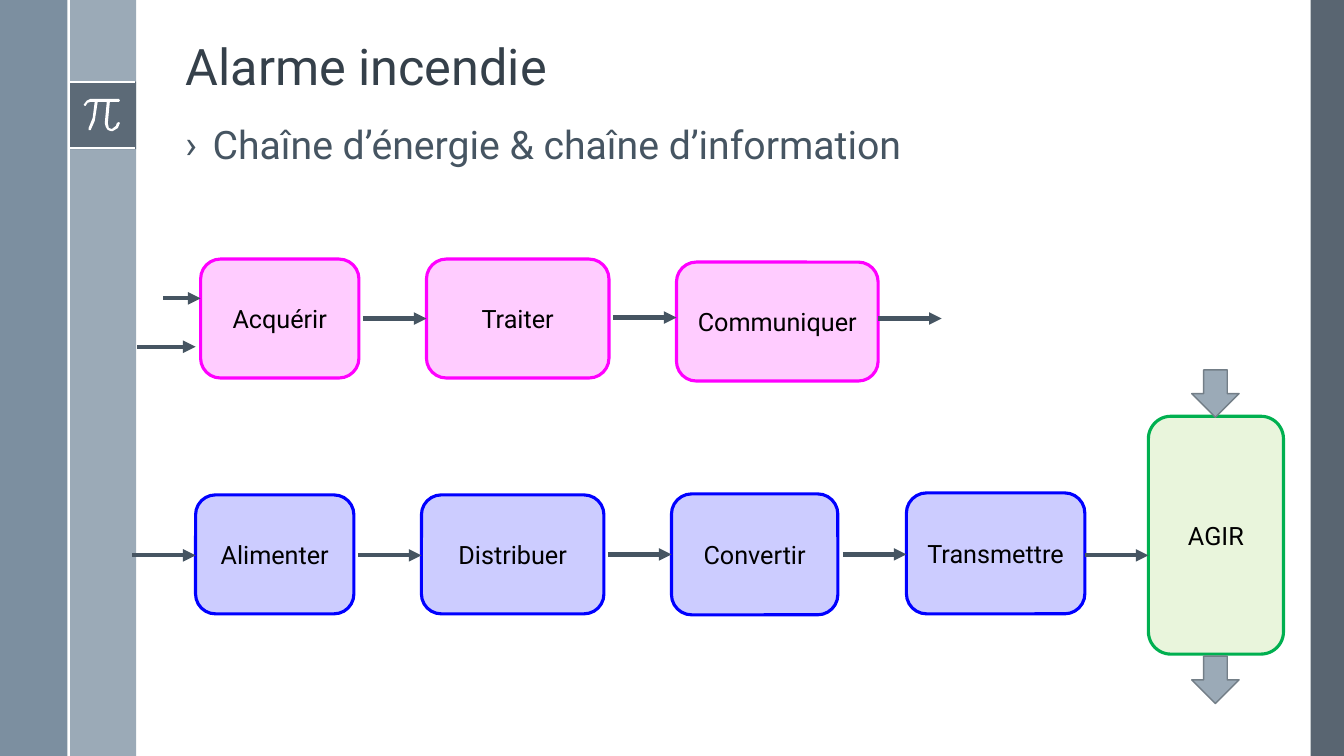
import dataclasses
import typing

import lxml.etree
import pptx
import pptx.dml.color
import pptx.enum.shapes
import pptx.enum.text
import pptx.oxml.ns
import pptx.util

Inches = pptx.util.Inches
Pt = pptx.util.Pt
RGBColor = pptx.dml.color.RGBColor
ShapeType = pptx.enum.shapes.MSO_SHAPE
Anchor = pptx.enum.text.MSO_ANCHOR
Align = pptx.enum.text.PP_ALIGN
qn = pptx.oxml.ns.qn

WHITE = RGBColor(0xFF, 0xFF, 0xFF)
BLACK = RGBColor(0x00, 0x00, 0x00)
TITLE_GREY = RGBColor(0x35, 0x40, 0x4A)
TEXT_GREY = RGBColor(0x46, 0x55, 0x62)
DARK_SLATE = RGBColor(0x47, 0x55, 0x62)
SLATE = RGBColor(0x6A, 0x80, 0x93)
LIGHT_SLATE = RGBColor(0x9B, 0xAA, 0xB7)
ARROW_EDGE = RGBColor(0x73, 0x7E, 0x87)
MAGENTA = RGBColor(0xFF, 0x00, 0xFF)
BLUE = RGBColor(0x00, 0x00, 0xFF)
GREEN = RGBColor(0x00, 0xB0, 0x50)
LIME = RGBColor(0x92, 0xD0, 0x50)
FONT_NAME = "Roboto"


@dataclasses.dataclass(frozen=True)
class Panel:
    left: float
    top: float
    width: float
    height: float
    fill: RGBColor
    opacity: int = 100
    edge: typing.Optional[RGBColor] = None
    edge_width: float = 2.25
    kind: ShapeType = ShapeType.RECTANGLE
    label: str = ""


@dataclasses.dataclass(frozen=True)
class Segment:
    x1: float
    y1: float
    x2: float
    y2: float
    color: RGBColor = TEXT_GREY
    width: float = 3
    arrow: bool = True


def block(label: str, left: float, top: float, width: float, height: float,
          edge: RGBColor, fill: RGBColor) -> Panel:
    return Panel(left, top, width, height, fill, 20, edge,
                 kind=ShapeType.ROUNDED_RECTANGLE, label=label)


def flow(start: float, end: float, height: float) -> Segment:
    return Segment(start, height, end, height)


def rule(x1: float, y1: float, x2: float, y2: float) -> Segment:
    return Segment(x1, y1, x2, y2, WHITE, 1.5, False)


SIDE_BANDS = [
    Panel(13, 0, 0.33, 7.5, DARK_SLATE, 90),
    Panel(0.68, 0, 0.67, 7.5, LIGHT_SLATE),
    Panel(0, 0, 0.67, 7.5, SLATE, 88),
    Panel(0.68, 0.81, 0.67, 0.67, DARK_SLATE, 75),
]
BAND_RULES = [
    rule(0.68, 0.81, 1.34, 0.81),
    rule(0.68, 1.47, 1.34, 1.47),
    rule(0.68, 0, 0.68, 7.5),
]
PI_OUTLINE = [
    (1.18, 0.98), (0.9, 0.98), (0.86, 1), (0.83, 1.04), (0.84, 1.05),
    (0.85, 1.05), (0.87, 1.02), (0.9, 1.01), (0.94, 1.01), (0.92, 1.17),
    (0.88, 1.27), (0.88, 1.29), (0.9, 1.29), (0.94, 1.2), (0.97, 1.01),
    (1.06, 1.01), (1.04, 1.22), (1.05, 1.26), (1.07, 1.29), (1.1, 1.3),
    (1.12, 1.3), (1.17, 1.27), (1.19, 1.22), (1.18, 1.21), (1.16, 1.22),
    (1.15, 1.25), (1.11, 1.28), (1.08, 1.27), (1.07, 1.22), (1.09, 1.01),
    (1.18, 1.01), (1.19, 1),
]
CHAIN_BLOCKS = [
    block("Alimenter", 1.94, 4.91, 1.57, 1.18, BLUE, BLUE),
    block("Distribuer", 4.18, 4.91, 1.81, 1.18, BLUE, BLUE),
    block("Convertir", 6.66, 4.9, 1.65, 1.2, BLUE, BLUE),
    block("Transmettre", 8.99, 4.89, 1.77, 1.2, BLUE, BLUE),
    block("AGIR", 11.39, 4.13, 1.34, 2.36, GREEN, LIME),
    block("Acquérir", 1.99, 2.57, 1.57, 1.18, MAGENTA, MAGENTA),
    block("Traiter", 4.23, 2.57, 1.81, 1.18, MAGENTA, MAGENTA),
    block("Communiquer", 6.71, 2.6, 2, 1.18, MAGENTA, MAGENTA),
]
MATTER_ARROWS = [
    Panel(11.82, top, 0.47, 0.47, LIGHT_SLATE, edge=ARROW_EDGE, edge_width=1,
          kind=ShapeType.DOWN_ARROW)
    for top in (3.67, 6.51)
]
FLOWS = [
    flow(1.31, 1.94, 5.51),
    flow(3.55, 4.18, 5.51),
    flow(6.03, 6.66, 5.5),
    flow(8.36, 8.99, 5.5),
    flow(10.76, 11.39, 5.51),
    flow(1.62, 1.99, 2.96),
    flow(1.36, 1.94, 3.44),
    flow(3.6, 4.23, 3.16),
    flow(6.08, 6.71, 3.15),
    flow(8.71, 9.34, 3.16),
]


def apply_format(target: typing.Any, values: dict) -> None:
    for name, value in values.items():
        setattr(target, name, value)


def write_text(box: typing.Any, text: str, size: int, color: RGBColor,
               frame_format: dict, para_format: dict) -> typing.Any:
    frame = box.text_frame
    apply_format(frame, {"word_wrap": True, "auto_size": pptx.enum.text.MSO_AUTO_SIZE.NONE,
                         **frame_format})
    para = frame.paragraphs[0]
    apply_format(para, para_format)
    span = para.add_run()
    span.text = text
    apply_format(span.font, {"name": FONT_NAME, "size": Pt(size), "bold": False})
    span.font.color.rgb = color
    return para


def draw_panel(page: typing.Any, panel: Panel) -> None:
    box = page.shapes.add_shape(panel.kind, Inches(panel.left), Inches(panel.top),
                                Inches(panel.width), Inches(panel.height))
    box.shadow.inherit = False
    box.fill.solid()
    box.fill.fore_color.rgb = panel.fill
    if panel.opacity < 100:
        color = box.element.spPr.find(f"{qn('a:solidFill')}/{qn('a:srgbClr')}")
        lxml.etree.SubElement(color, qn("a:alpha"), val=str(panel.opacity * 1000))
    if panel.edge is None:
        box.line.fill.background()
    else:
        box.line.color.rgb = panel.edge
        box.line.width = Pt(panel.edge_width)
    if panel.label:
        write_text(box, panel.label, 18, BLACK, {"vertical_anchor": Anchor.MIDDLE},
                   {"alignment": Align.CENTER})


def draw_segment(page: typing.Any, segment: Segment) -> None:
    connector = page.shapes.add_connector(
        pptx.enum.shapes.MSO_CONNECTOR.STRAIGHT, Inches(segment.x1), Inches(segment.y1),
        Inches(segment.x2), Inches(segment.y2))
    connector.line.color.rgb = segment.color
    connector.line.width = Pt(segment.width)
    properties = connector.element.spPr
    if segment.arrow:
        lxml.etree.SubElement(properties.find(qn("a:ln")), qn("a:tailEnd"), type="triangle")
    lxml.etree.SubElement(properties, qn("a:effectLst"))


def draw_pi(page: typing.Any) -> None:
    points = [(Inches(x), Inches(y)) for x, y in PI_OUTLINE]
    builder = page.shapes.build_freeform(*points[0])
    builder.add_line_segments(points[1:], close=True)
    symbol = builder.convert_to_shape()
    symbol.shadow.inherit = False
    symbol.fill.solid()
    symbol.fill.fore_color.rgb = WHITE
    symbol.line.fill.background()


def draw_headings(page: typing.Any) -> None:
    title = page.shapes.title
    apply_format(title, {"left": Inches(1.74), "top": Inches(0.19),
                         "width": Inches(10.7), "height": Inches(0.82)})
    write_text(title, "Alarme incendie", 36, TITLE_GREY, {"vertical_anchor": Anchor.BOTTOM},
               {"alignment": Align.LEFT, "line_spacing": 0.9})
    subtitle = page.shapes.add_textbox(Inches(1.74), Inches(1.2), Inches(10.7), Inches(0.58))
    para = write_text(subtitle, "Chaîne d’énergie & chaîne d’information", 28, TEXT_GREY,
                      {"vertical_anchor": Anchor.TOP},
                      {"line_spacing": 0.9, "space_before": Pt(14)})
    properties = para._p.get_or_add_pPr()
    properties.set("marL", str(Inches(0.27)))
    properties.set("indent", str(Inches(-0.27)))
    lxml.etree.SubElement(properties, qn("a:buFont"), typeface=FONT_NAME)
    lxml.etree.SubElement(properties, qn("a:buChar"), char="›")


def main() -> None:
    deck = pptx.Presentation()
    apply_format(deck, {"slide_width": Inches(13.33), "slide_height": Inches(7.5)})
    page = deck.slides.add_slide(deck.slide_layouts[5])
    for band in SIDE_BANDS:
        draw_panel(page, band)
    for segment in BAND_RULES:
        draw_segment(page, segment)
    draw_pi(page)
    draw_headings(page)
    for panel in CHAIN_BLOCKS + MATTER_ARROWS:
        draw_panel(page, panel)
    for segment in FLOWS:
        draw_segment(page, segment)
    deck.save("out.pptx")


if __name__ == "__main__":
    main()
